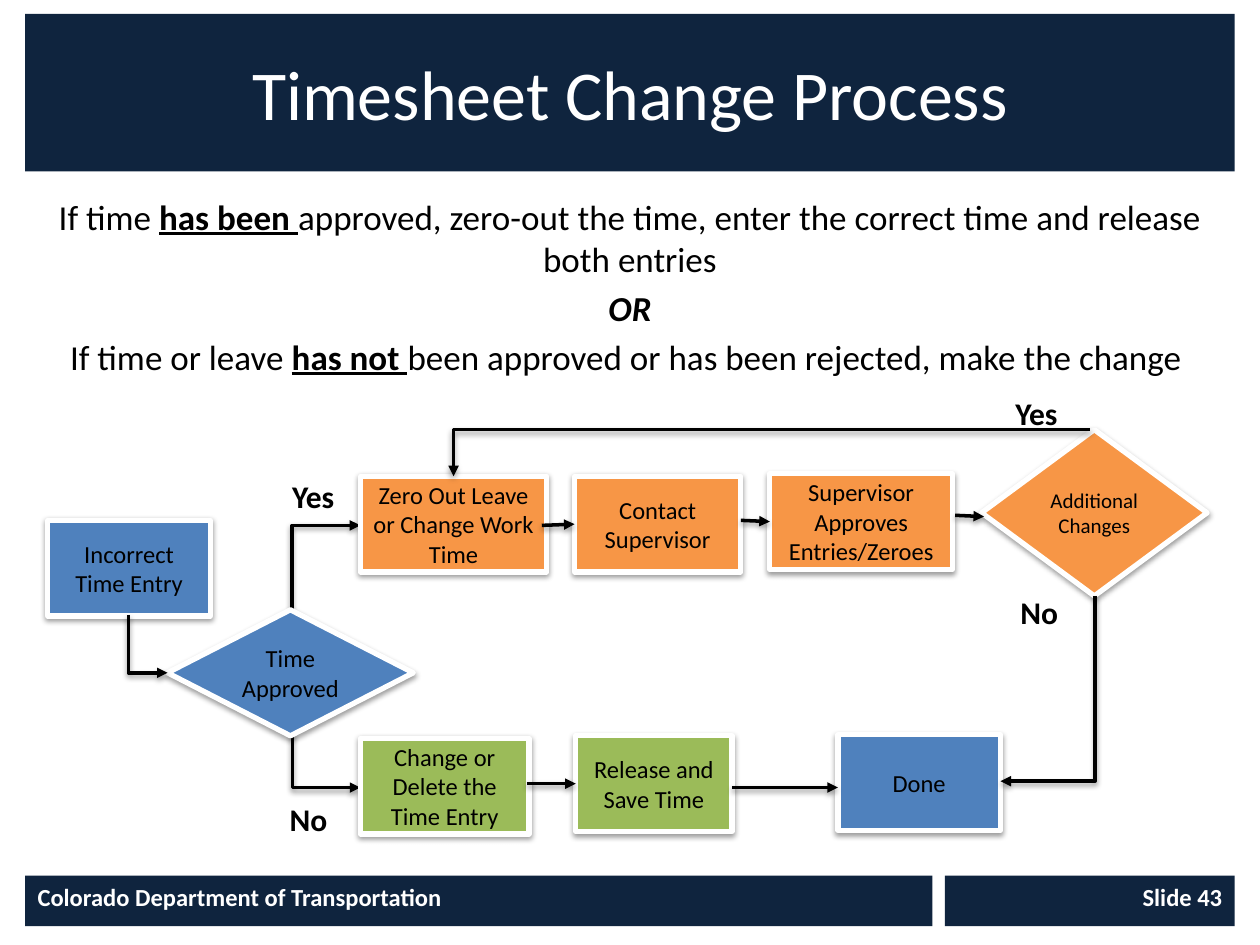
from dataclasses import dataclass
from typing import Optional

import pptx
import pptx.dml.color
import pptx.enum.shapes
import pptx.enum.text
import pptx.oxml
import pptx.oxml.ns
import pptx.util

RGBColor = pptx.dml.color.RGBColor
SHAPE = pptx.enum.shapes.MSO_SHAPE
CONNECTOR = pptx.enum.shapes.MSO_CONNECTOR
ALIGN = pptx.enum.text.PP_ALIGN
ANCHOR = pptx.enum.text.MSO_ANCHOR

NAVY = RGBColor(0x0F, 0x24, 0x3E)
BLUE = RGBColor(0x4F, 0x81, 0xBD)
ORANGE = RGBColor(0xF7, 0x96, 0x46)
GREEN = RGBColor(0x9B, 0xBB, 0x59)
BLACK = RGBColor(0, 0, 0)
WHITE = RGBColor(0xFF, 0xFF, 0xFF)

EMU_PER_PX = 9144  # 100 px to the inch
TOP, LEFT, BOTTOM, RIGHT = range(4)


def px(length: float) -> int:
    return round(length * EMU_PER_PX)


@dataclass
class Bar:
    text: str
    box: tuple
    size: int
    bold: bool
    align: int
    anchor: int


@dataclass
class Step:
    text: str
    box: tuple
    color: RGBColor
    kind: int = SHAPE.RECTANGLE
    size: int = 14


@dataclass
class Label:
    text: str
    box: tuple


@dataclass
class Arrow:
    start: tuple
    end: tuple
    to_step: Optional[str] = None  # step whose left side the arrow joins


@dataclass
class Elbow:
    start: tuple
    end: tuple
    vertical_first: bool = True


BARS = [
    Bar("Timesheet Change Process", (20, 11, 960, 125), 40, False, ALIGN.CENTER, ANCHOR.MIDDLE),
    Bar("Colorado Department of Transportation", (20, 695, 720, 40), 14, True, ALIGN.LEFT, ANCHOR.TOP),
    Bar("Slide 43", (750, 695, 230, 40), 14, True, ALIGN.RIGHT, ANCHOR.TOP),
]

UNDERLINED = {"bold": True, "underline": True}
GUIDANCE = [
    [("If time ", {}), ("has been ", UNDERLINED),
     ("approved, zero-out the time, enter the correct time and release both entries", {})],
    [("OR", {"bold": True, "italic": True})],
    [("If time or leave ", {}), ("has not ", UNDERLINED),
     ("been approved or has been rejected, make the change ", {})],
]

STEPS = {
    "incorrect": Step("Incorrect Time Entry", (38, 413, 129, 76), BLUE),
    "approved": Step("Time Approved ", (133, 484, 195, 100), BLUE, SHAPE.DIAMOND),
    "zero": Step("Zero Out Leave or Change Work Time", (286, 378, 148, 76), ORANGE),
    "contact": Step("Contact Supervisor", (456, 378, 132, 76), ORANGE),
    "supervisor": Step("Supervisor Approves Entries/Zeroes", (611, 376, 145, 76), ORANGE),
    "additional": Step("Additional Changes", (779, 341, 179, 132), ORANGE, SHAPE.DIAMOND, 12),
    "change": Step("Change or Delete the Time Entry", (286, 586, 134, 76), GREEN),
    "release": Step("Release and Save Time", (457, 584, 124, 76), GREEN),
    "done": Step("Done", (665, 583, 129, 76), BLUE),
}

LABELS = [
    Label("Yes", (222, 374, 54, 40)),
    Label("No", (220, 630, 50, 40)),
    Label("Yes", (796, 308, 54, 40)),
    Label("No", (800, 466, 50, 40)),
]

# The two branches lie behind the steps, the other elbows in front
BRANCHES = [Elbow((232, 492), (286, 417)), Elbow((232, 567), (286, 625))]
ELBOWS = [
    Elbow((102, 488), (133, 534)),
    Elbow((865, 341), (360, 378), vertical_first=False),
    Elbow((869, 473), (794, 620)),
]
ARROWS = [
    Arrow((430, 417), (456, 417), "contact"),
    Arrow((588, 413), (611, 414), "supervisor"),
    Arrow((758, 409), (781, 410)),
    Arrow((418, 622), (457, 622), "release"),
    Arrow((581, 625), (665, 625)),
]


def add_run(paragraph, text: str, size: int, color: RGBColor, **formats) -> None:
    run = paragraph.add_run()
    run.text = text
    run.font.color.rgb = color
    settings = {"name": "Calibri", "size": pptx.util.Pt(size), **formats}
    for attribute, value in settings.items():
        setattr(run.font, attribute, value)


def add_shadow(properties) -> None:
    for old in properties.findall(pptx.oxml.ns.qn("a:effectLst")):
        properties.remove(old)
    properties.append(pptx.oxml.parse_xml(
        f'<a:effectLst {pptx.oxml.ns.nsdecls("a")}>'
        '<a:outerShdw blurRad="40000" dist="20000" dir="5400000" rotWithShape="0">'
        '<a:srgbClr val="000000"><a:alpha val="38000"/></a:srgbClr>'
        '</a:outerShdw></a:effectLst>'))


def add_filled(slide, kind: int, box: tuple, color: RGBColor):
    shape = slide.shapes.add_shape(kind, *map(px, box))
    shape.shadow.inherit = False
    shape.fill.solid()
    shape.fill.fore_color.rgb = color
    shape.line.fill.background()
    shape.text_frame.word_wrap = True
    return shape


def draw_bar(slide, bar: Bar) -> None:
    frame = add_filled(slide, SHAPE.RECTANGLE, bar.box, NAVY).text_frame
    frame.vertical_anchor = bar.anchor
    frame.paragraphs[0].alignment = bar.align
    add_run(frame.paragraphs[0], bar.text, bar.size, WHITE, bold=bar.bold)


def draw_guidance(slide) -> None:
    frame = slide.shapes.add_textbox(*map(px, (20, 150, 960, 189))).text_frame
    frame.word_wrap = True
    for index, runs in enumerate(GUIDANCE):
        paragraph = frame.add_paragraph() if index else frame.paragraphs[0]
        paragraph.alignment = ALIGN.CENTER
        paragraph.space_before = pptx.util.Pt(4)
        for text, formats in runs:
            add_run(paragraph, text, 20, BLACK, **formats)


def draw_step(slide, step: Step):
    shape = add_filled(slide, step.kind, step.box, step.color)
    shape.line.color.rgb = WHITE
    shape.line.width = pptx.util.Pt(3)
    add_shadow(shape._element.spPr)
    frame = shape.text_frame
    frame.vertical_anchor = ANCHOR.MIDDLE
    frame.paragraphs[0].alignment = ALIGN.CENTER
    add_run(frame.paragraphs[0], step.text, step.size, BLACK)
    return shape


def draw_label(slide, label: Label) -> None:
    frame = slide.shapes.add_textbox(*map(px, label.box)).text_frame
    frame.word_wrap = False
    add_run(frame.paragraphs[0], label.text, 18, BLACK, bold=True)


def draw_line(slide, kind: int, start: tuple, end: tuple):
    line = slide.shapes.add_connector(kind, *map(px, start + end))
    line.line.color.rgb = BLACK
    line.line.width = pptx.util.Pt(2)
    line.line._get_or_add_ln().append(pptx.oxml.parse_xml(
        f'<a:tailEnd {pptx.oxml.ns.nsdecls("a")} type="triangle"/>'))
    add_shadow(line._element.spPr)
    return line


def draw_arrow(slide, arrow: Arrow, shapes: dict) -> None:
    line = draw_line(slide, CONNECTOR.STRAIGHT, arrow.start, arrow.end)
    if arrow.to_step:
        line.end_connect(shapes[arrow.to_step], LEFT)


def draw_elbow(slide, elbow: Elbow) -> None:
    """Draw a one-corner connector; a quarter turn makes it leave vertically."""
    start, end = elbow.start, elbow.end
    if elbow.vertical_first:
        mid_x, mid_y = (start[0] + end[0]) / 2, (start[1] + end[1]) / 2
        half_x, half_y = (end[0] - start[0]) / 2, (end[1] - start[1]) / 2
        start, end = (mid_x - half_y, mid_y + half_x), (mid_x + half_y, mid_y - half_x)
    properties = draw_line(slide, CONNECTOR.ELBOW, start, end)._element.spPr
    properties.find(pptx.oxml.ns.qn("a:prstGeom")).set("prst", "bentConnector2")
    if elbow.vertical_first:
        properties.find(pptx.oxml.ns.qn("a:xfrm")).set("rot", "5400000")


def main() -> None:
    deck = pptx.Presentation()
    deck.slide_width, deck.slide_height = px(1000), px(750)
    slide = deck.slides.add_slide(deck.slide_layouts[6])

    # Title, footer and guidance
    for bar in BARS:
        draw_bar(slide, bar)
    draw_guidance(slide)

    # Flowchart
    for branch in BRANCHES:
        draw_elbow(slide, branch)
    shapes = {key: draw_step(slide, step) for key, step in STEPS.items()}
    for elbow in ELBOWS:
        draw_elbow(slide, elbow)
    for arrow in ARROWS:
        draw_arrow(slide, arrow, shapes)
    for label in LABELS:
        draw_label(slide, label)

    deck.save("out.pptx")


if __name__ == "__main__":
    main()
